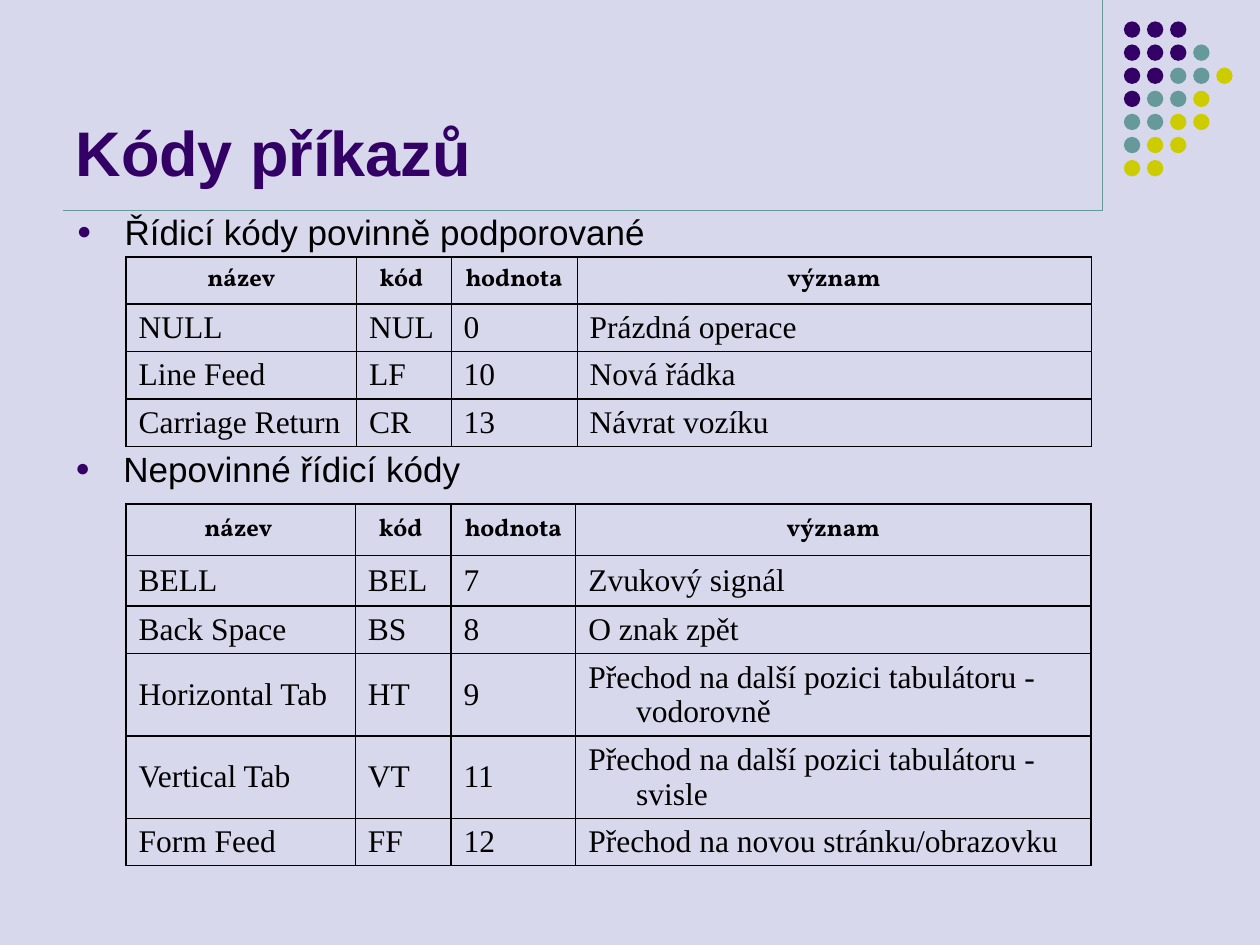
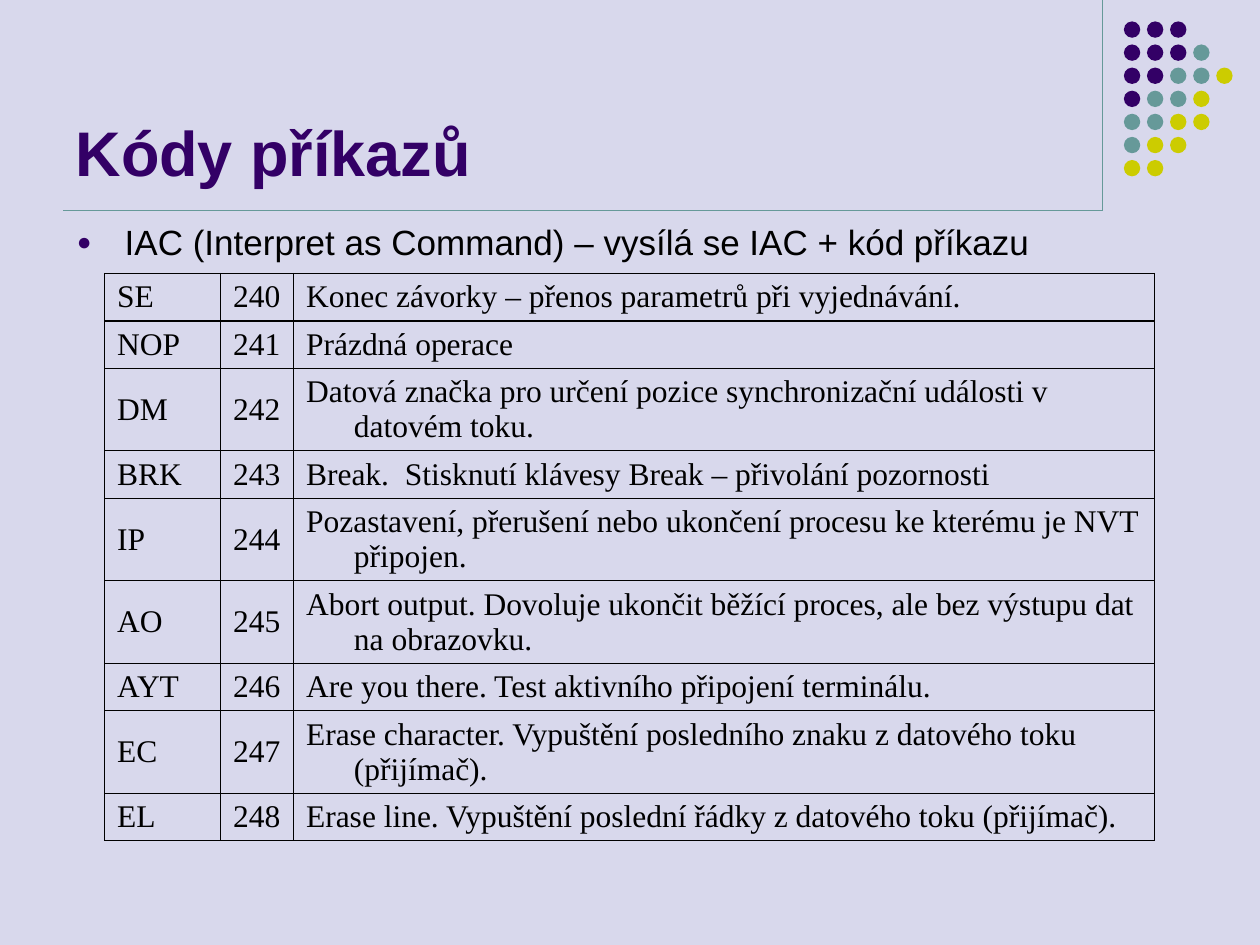
from dataclasses import dataclass

from lxml.etree import SubElement
from pptx import Presentation
from pptx.dml.color import RGBColor
from pptx.enum.shapes import MSO_CONNECTOR as Connector, MSO_SHAPE as Preset
from pptx.enum.text import MSO_ANCHOR as Anchor, MSO_AUTO_SIZE as AutoSize, PP_ALIGN as Align
from pptx.oxml.ns import qn
from pptx.util import Inches, Pt

# Shared look
LAVENDER = RGBColor(0xD8, 0xD8, 0xEC)
PURPLE = RGBColor(0x33, 0x00, 0x66)
TEAL = RGBColor(0x66, 0x99, 0x99)
OLIVE = RGBColor(0xCC, 0xCC, 0x00)
BLACK = RGBColor(0x00, 0x00, 0x00)
HEADING_FONT, HEADER_FONT, CELL_FONT = "Arial", "Vollkorn", "Times New Roman"
HANGING_INDENT = Inches(0.38)
RULE_WIDTH = Pt(0.75)
RULE_X, RULE_Y = Inches(8.75), Inches(1.67)

# Corner dots: one letter per dot, one string per row
DOT_ROWS = ("PPP", "PPPT", "PPTTO", "PTTO", "TTOO", "TOO", "OO")
DOT_COLORS = {"P": PURPLE, "T": TEAL, "O": OLIVE}
DOT_LEFT, DOT_TOP, DOT_SIZE = Inches(8.92), Inches(0.17), Inches(0.13)
THREE_DOT_STEPS = Inches(0.55)


@dataclass(frozen=True)
class Box:
    left: float
    top: float
    width: float
    height: float

    def lengths(self) -> tuple:
        return tuple(Inches(v) for v in (self.left, self.top, self.width, self.height))


@dataclass(frozen=True)
class Bullet:
    text: str
    box: Box


@dataclass(frozen=True)
class CodeTable:
    left: float
    top: float
    column_widths: tuple
    row_heights: tuple
    rows: tuple
    has_header: bool = True


@dataclass(frozen=True)
class CodeSlide:
    bullets: tuple  # the first one fills the body placeholder
    tables: tuple


TITLE = "Kódy příkazů"
TITLE_BOX = Box(0.5, 0.13, 8.25, 1.42)
LINE, TWO_LINES = 0.37, 0.65

REQUIRED_CODES = CodeTable(
    1, 2.04, (1.83, 0.75, 1, 4.08), (LINE,) * 4,
    (
        ("název", "kód ", "hodnota ", "význam"),
        ("NULL", "NUL", "0", "Prázdná operace"),
        ("Line Feed", "LF", "10", "Nová řádka"),
        ("Carriage Return", "CR", "13", "Návrat vozíku"),
    ),
)
OPTIONAL_CODES = CodeTable(
    1, 4, (1.82, 0.76, 0.99, 4.09), (0.41, 0.4, LINE, TWO_LINES, TWO_LINES, LINE),
    (
        ("název ", "kód ", "hodnota ", "význam"),
        ("BELL", "BEL", "7", "Zvukový signál"),
        ("Back Space", "BS", "8", "O znak zpět"),
        ("Horizontal Tab", "HT", "9", "Přechod na další pozici tabulátoru - vodorovně"),
        ("Vertical Tab", "VT", "11", "Přechod na další pozici tabulátoru - svisle"),
        ("Form Feed", "FF", "12", "Přechod na novou stránku/obrazovku"),
    ),
)
IAC_COMMANDS = CodeTable(
    0.83, 2.17, (0.92, 0.58, 6.83),
    (LINE, LINE, TWO_LINES, LINE, TWO_LINES, TWO_LINES, LINE, TWO_LINES, LINE),
    (
        ("SE", "240", "Konec závorky – přenos parametrů při vyjednávání."),
        ("NOP", "241", "Prázdná operace"),
        ("DM", "242", "Datová značka pro určení pozice synchronizační události v datovém toku."),
        ("BRK", "243", "Break.  Stisknutí klávesy Break – přivolání pozornosti"),
        ("IP", "244", "Pozastavení, přerušení nebo ukončení procesu ke kterému je NVT připojen."),
        ("AO", "245", "Abort output. Dovoluje ukončit běžící proces, ale bez výstupu dat na obrazovku."),
        ("AYT", "246", "Are you there. Test aktivního připojení terminálu."),
        ("EC", "247", "Erase character. Vypuštění posledního znaku z datového toku (přijímač)."),
        ("EL", "248", "Erase line. Vypuštění poslední řádky z datového toku (přijímač)."),
    ),
    has_header=False,
)

SLIDES = (
    CodeSlide(
        (
            Bullet("Řídicí kódy povinně podporované", Box(0.51, 1.62, 8.33, 0.52)),
            Bullet("Nepovinné řídicí kódy", Box(0.5, 3.5, 4.42, 0.5)),
        ),
        (REQUIRED_CODES, OPTIONAL_CODES),
    ),
    CodeSlide(
        (Bullet("IAC (Interpret as Command) – vysílá se IAC + kód příkazu",
                Box(0.51, 1.7, 9.08, 0.6)),),
        (IAC_COMMANDS,),
    ),
)


def place(shape, box: Box) -> None:
    shape.left, shape.top, shape.width, shape.height = box.lengths()


def add_run(paragraph, text: str, font_name: str, size: int,
            color: RGBColor = BLACK, bold: bool = False) -> None:
    run = paragraph.add_run()
    run.text = text
    run.font.name, run.font.size, run.font.bold = font_name, Pt(size), bold
    run.font.color.rgb = color


def hang(paragraph):
    """Give the paragraph its hanging indent and return its properties."""
    properties = paragraph._p.get_or_add_pPr()
    properties.set("marL", str(HANGING_INDENT))
    properties.set("indent", str(-HANGING_INDENT))
    return properties


def draw_rule(slide, begin: tuple, end: tuple) -> None:
    rule = slide.shapes.add_connector(Connector.STRAIGHT, *begin, *end)
    rule.line.color.rgb, rule.line.width = TEAL, RULE_WIDTH
    SubElement(rule.element.spPr, qn("a:effectLst"))


def draw_decoration(slide) -> None:
    corner = (RULE_X, RULE_Y)
    draw_rule(slide, (RULE_X, 0), corner)
    draw_rule(slide, (Inches(0.5), RULE_Y), corner)
    dots = slide.shapes.add_group_shape()
    for row, letters in enumerate(DOT_ROWS):
        for column, letter in enumerate(letters):
            dot = dots.shapes.add_shape(
                Preset.OVAL,
                DOT_LEFT + THREE_DOT_STEPS * column // 3,
                DOT_TOP + THREE_DOT_STEPS * row // 3,
                DOT_SIZE, DOT_SIZE,
            )
            dot.shadow.inherit = False
            dot.fill.solid()
            dot.fill.fore_color.rgb = DOT_COLORS[letter]
            dot.line.fill.background()


def fill_title(slide) -> None:
    title = slide.shapes.title
    place(title, TITLE_BOX)
    frame = title.text_frame
    frame.vertical_anchor, frame.auto_size = Anchor.BOTTOM, AutoSize.NONE
    frame.paragraphs[0].alignment = Align.LEFT
    add_run(frame.paragraphs[0], TITLE, HEADING_FONT, 36, PURPLE, bold=True)


def fill_bullet(shape, bullet: Bullet) -> None:
    place(shape, bullet.box)
    frame = shape.text_frame
    frame.word_wrap, frame.auto_size = True, AutoSize.NONE
    paragraph = frame.paragraphs[0]
    properties = hang(paragraph)
    space_before = SubElement(properties, qn("a:spcBef"))
    SubElement(space_before, qn("a:spcPct"), val="20000")
    bullet_color = SubElement(properties, qn("a:buClr"))
    SubElement(bullet_color, qn("a:srgbClr"), val=str(PURPLE))
    SubElement(properties, qn("a:buSzPct"), val="70000")
    SubElement(properties, qn("a:buFont"), typeface=HEADING_FONT)
    SubElement(properties, qn("a:buChar"), char="●")
    add_run(paragraph, bullet.text, HEADING_FONT, 20)


def draw_borders(cell) -> None:
    properties = cell._tc.get_or_add_tcPr()
    for position, side in enumerate(("a:lnL", "a:lnR", "a:lnT", "a:lnB")):
        border = properties.makeelement(qn(side), {"w": str(RULE_WIDTH)})
        fill = SubElement(border, qn("a:solidFill"))
        SubElement(fill, qn("a:srgbClr"), val=str(BLACK))
        properties.insert(position, border)  # borders come before the fill


def draw_table(slide, spec: CodeTable) -> None:
    box = Box(spec.left, spec.top, sum(spec.column_widths), sum(spec.row_heights))
    table = slide.shapes.add_table(
        len(spec.rows), len(spec.column_widths), *box.lengths()).table
    table.first_row = table.horz_banding = False
    for column, width in zip(table.columns, spec.column_widths):
        column.width = Inches(width)
    for row_index, (texts, height) in enumerate(zip(spec.rows, spec.row_heights)):
        table.rows[row_index].height = Inches(height)
        is_header = spec.has_header and row_index == 0
        for column_index, text in enumerate(texts):
            cell = table.cell(row_index, column_index)
            cell.vertical_anchor = Anchor.MIDDLE
            cell.fill.background()
            draw_borders(cell)
            paragraph = cell.text_frame.paragraphs[0]
            hang(paragraph)
            if is_header:
                paragraph.alignment = Align.CENTER
                add_run(paragraph, text, HEADER_FONT, 14, bold=True)
            else:
                add_run(paragraph, text, CELL_FONT, 18)


def build_slide(presentation, content: CodeSlide) -> None:
    slide = presentation.slides.add_slide(presentation.slide_layouts[1])
    draw_decoration(slide)
    fill_title(slide)
    body_bullet, *other_bullets = content.bullets
    fill_bullet(slide.placeholders[1], body_bullet)
    for bullet in other_bullets:
        fill_bullet(slide.shapes.add_textbox(*bullet.box.lengths()), bullet)
    for table in content.tables:
        draw_table(slide, table)


def main() -> None:
    presentation = Presentation()
    presentation.slide_width, presentation.slide_height = Inches(10), Inches(7.5)
    background = presentation.slide_master.background.fill
    background.solid()
    background.fore_color.rgb = LAVENDER
    for content in SLIDES:
        build_slide(presentation, content)
    presentation.save("out.pptx")


if __name__ == "__main__":
    main()
